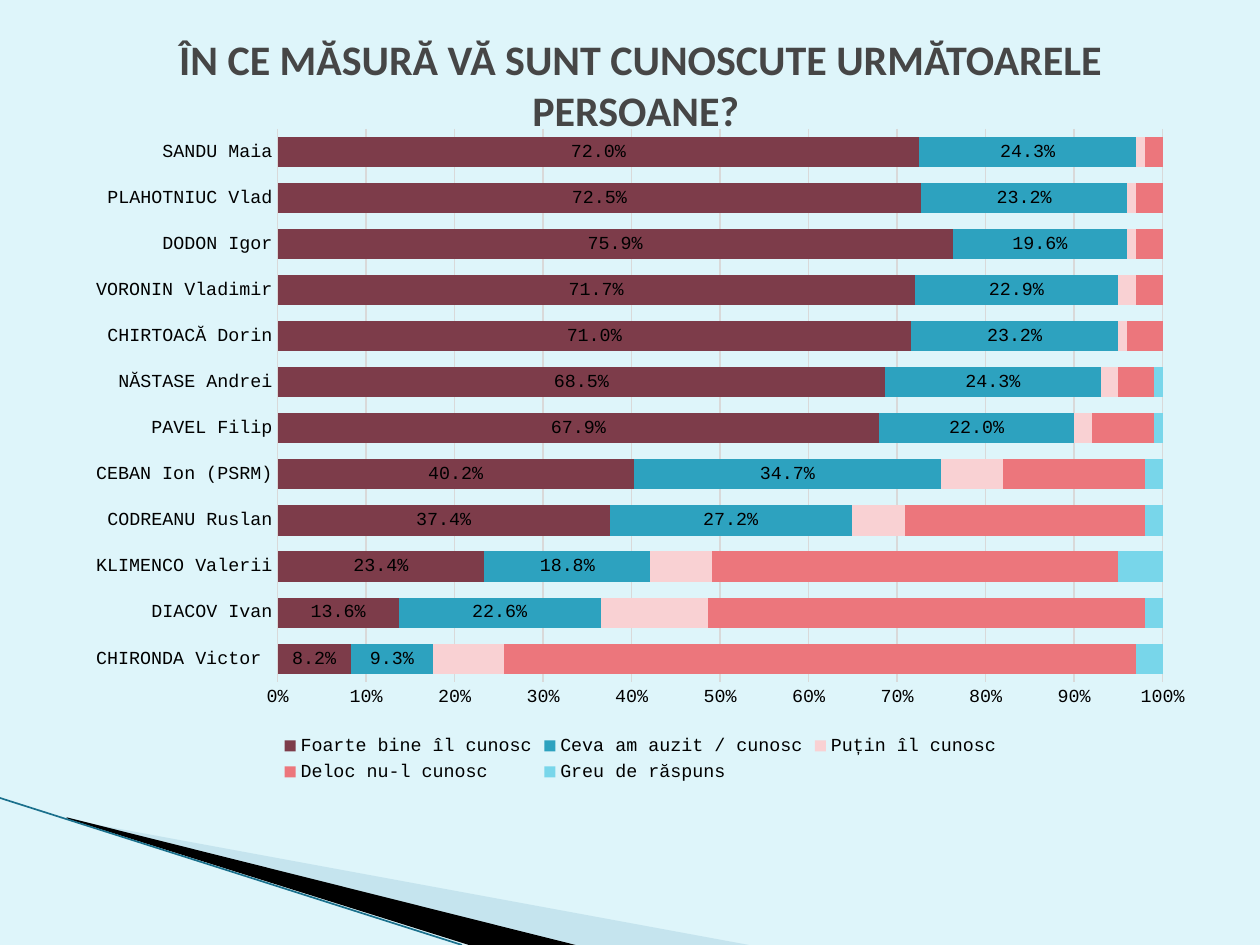
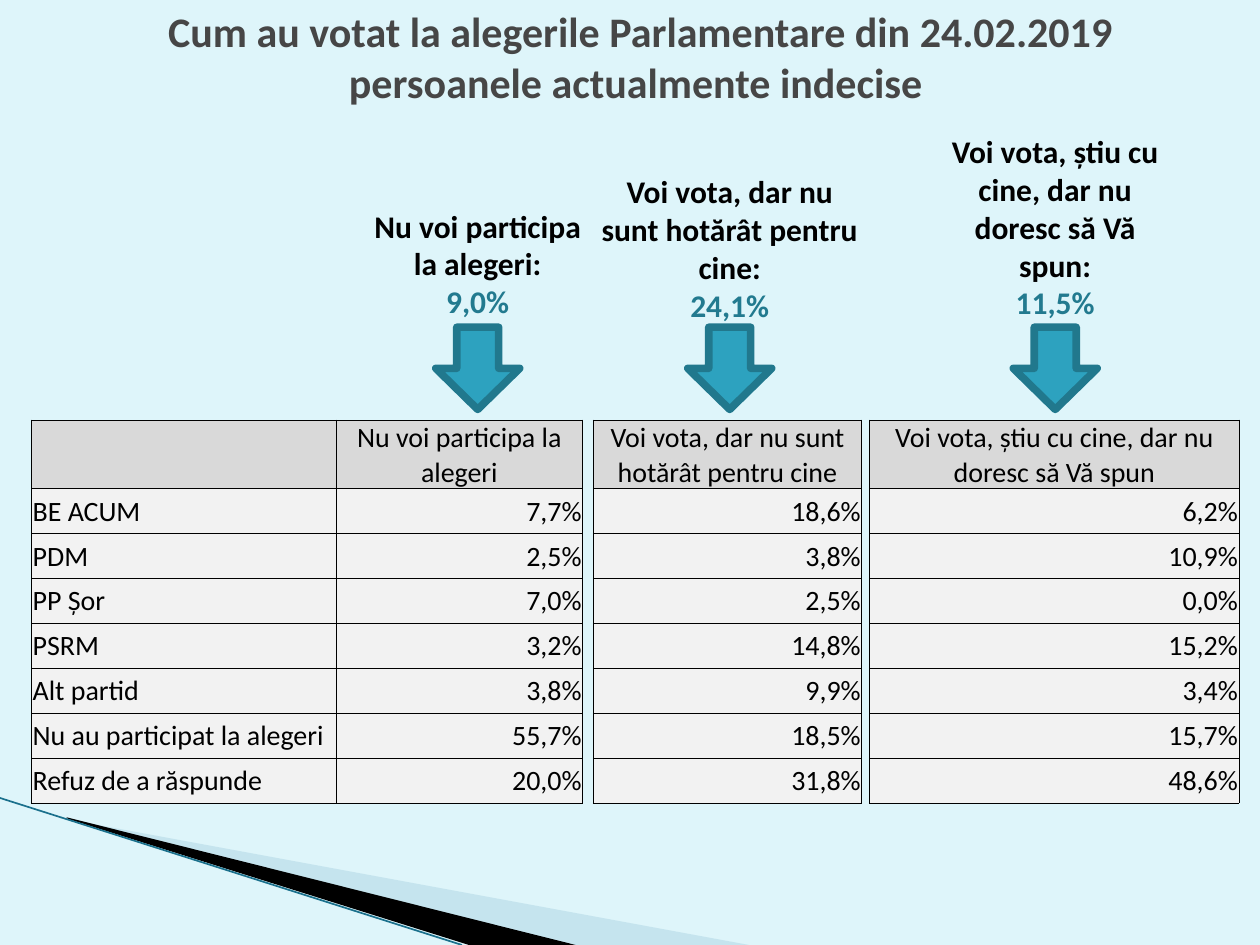
from dataclasses import dataclass

from lxml import etree
from pptx import Presentation
from pptx import util as u
from pptx.chart.data import CategoryChartData
from pptx.dml.color import RGBColor
from pptx.enum import chart as ch, shapes, text
from pptx.oxml import ns

Pt = u.Pt


@dataclass(frozen=True)
class Theme:
    background: str = "DEF5FA"
    title: str = "464646"
    ink: str = "000000"
    accent: str = "2DA2BF"
    accent_dark: str = "21788D"
    percent: str = "227A8F"
    wedge: str = "A0CBDC"
    edge: str = "1A708C"
    grid: str = "D9D9D9"
    header: str = "D9D9D9"
    cell: str = "F2F2F2"
    font: str = "Calibri"
    chart_font: str = "Courier New"
    title_size: float = 24
    callout_size: float = 18
    table_size: float = 16
    chart_size: float = 10.5


THEME = Theme()
SLIDE_WIDTH, SLIDE_HEIGHT = 720, 540
TABLE_TOP, HEADER_HEIGHT, ROW_HEIGHT = 240, 39, 25.7
ARROW_TOP, ARROW_WIDTH, ARROW_HEIGHT = 187, 48, 47

PEOPLE = ["CHIRONDA Victor ", "DIACOV Ivan", "KLIMENCO Valerii", "CODREANU Ruslan",
          "CEBAN Ion (PSRM)", "PAVEL Filip", "NĂSTASE Andrei", "CHIRTOACĂ Dorin",
          "VORONIN Vladimir", "DODON Igor", "PLAHOTNIUC Vlad", "SANDU Maia"]

# name, colour, labelled, values
ANSWERS = [
    ("Foarte bine îl cunosc", "7D3C4A", True,
     [0.082, 0.136, 0.234, 0.374, 0.402, 0.679, 0.685, 0.71, 0.717, 0.759, 0.725, 0.72]),
    ("Ceva am auzit / cunosc", THEME.accent, True,
     [0.093, 0.226, 0.188, 0.272, 0.347, 0.22, 0.243, 0.232, 0.229, 0.196, 0.232, 0.243]),
    ("Puțin îl cunosc", "F9D1D3", False,
     [0.08, 0.12, 0.07, 0.06, 0.07, 0.02, 0.02, 0.01, 0.02, 0.01, 0.01, 0.01]),
    ("Deloc nu-l cunosc", "EC767C", False,
     [0.71, 0.49, 0.46, 0.27, 0.16, 0.07, 0.04, 0.04, 0.03, 0.03, 0.03, 0.02]),
    ("Greu de răspuns", "78D6EA", False,
     [0.03, 0.02, 0.05, 0.02, 0.02, 0.01, 0.01, 0, 0, 0, 0, 0]),
]

PARTIES = ["BE ACUM", "PDM", "PP Șor", "PSRM", "Alt partid",
           "Nu au participat la alegeri", "Refuz de a răspunde"]

# group, share, (callout centre, top, width), (table left, column width), votes by party
UNDECIDED = [
    ("Nu voi participa la alegeri", "9,0%", (273, 114.5, 138), (18, 141),
     ["7,7%", "2,5%", "7,0%", "3,2%", "3,8%", "55,7%", "20,0%"]),
    ("Voi vota, dar nu sunt hotărât pentru cine", "24,1%", (417, 95, 162), (339, 153.5),
     ["18,6%", "3,8%", "2,5%", "14,8%", "9,9%", "18,5%", "31,8%"]),
    ("Voi vota, știu cu cine, dar nu doresc să Vă spun", "11,5%", (603, 72, 138), (497, 211),
     ["6,2%", "10,9%", "0,0%", "15,2%", "3,4%", "15,7%", "48,6%"]),
]
PARTY_COLUMN = 174


def rgb(code):
    return RGBColor.from_string(code)


def paint(target, code):
    target.fill.solid()
    target.fill.fore_color.rgb = rgb(code)


def style_font(font, size, color=THEME.ink, bold=False, name=THEME.font):
    font.name, font.size, font.bold = name, Pt(size), bold
    font.color.rgb = rgb(color)


def add_span(para, wording, size, color=THEME.ink, bold=False, align=text.PP_ALIGN.CENTER):
    para.alignment = align
    span = para.add_run()
    span.text = wording
    style_font(span.font, size, color, bold)


def add_wedge(page, corners, color, opacity=None):
    points = [(Pt(x), Pt(y)) for x, y in corners]
    builder = page.shapes.build_freeform(*points[0])
    builder.add_line_segments(points[1:])
    wedge = builder.convert_to_shape()
    wedge.shadow.inherit = False
    paint(wedge, color)
    wedge.line.fill.background()
    if opacity:
        tone = wedge.fill._xPr.find(".//" + ns.qn("a:srgbClr"))
        etree.SubElement(tone, ns.qn("a:alpha"), val=str(opacity * 1000))


def add_corner_art(page):
    add_wedge(page, [(40, 468.5), (428, 540), (328, 540), (40, 468)], THEME.wedge, 40)
    add_wedge(page, [(38, 467), (329, 540), (268, 540), (39, 468)], THEME.ink)
    edge = page.shapes.add_connector(shapes.MSO_CONNECTOR.STRAIGHT,
                                     Pt(0), Pt(456), Pt(264), Pt(SLIDE_HEIGHT))
    edge.line.color.rgb = rgb(THEME.edge)
    edge.line.width = Pt(0.95)
    etree.SubElement(edge._element.spPr, ns.qn("a:effectLst"))


def add_page(deck, title, title_top):
    page = deck.slides.add_slide(deck.slide_layouts.get_by_name("Title Only"))
    add_corner_art(page)
    box = page.shapes.title
    box.left, box.top, box.width, box.height = Pt(42), Pt(title_top), Pt(648), Pt(60)
    frame = box.text_frame
    frame.auto_size = text.MSO_AUTO_SIZE.NONE
    frame.word_wrap = True
    frame.vertical_anchor = text.MSO_ANCHOR.MIDDLE
    add_span(frame.paragraphs[0], title, THEME.title_size, THEME.title, True)
    return page


def add_awareness_chart(page):
    data = CategoryChartData(number_format="0.0%")
    data.categories = PEOPLE
    for name, _, _, values in ANSWERS:
        data.add_series(name, values)
    chart = page.shapes.add_chart(ch.XL_CHART_TYPE.BAR_STACKED_100, Pt(42), Pt(66),
                                  Pt(648), Pt(384), data).chart
    style_font(chart.font, THEME.chart_size, name=THEME.chart_font)
    chart.has_title = False
    chart.has_legend = True
    chart.legend.position = ch.XL_LEGEND_POSITION.BOTTOM
    chart.legend.include_in_layout = False
    style_font(chart.legend.font, THEME.chart_size, name=THEME.chart_font)

    plot = chart.plots[0]
    plot.gap_width, plot.overlap, plot.vary_by_categories = 53, 100, False
    for series, (_, color, labelled, _) in zip(plot.series, ANSWERS):
        paint(series.format, color)
        if labelled:
            labels = series.data_labels
            labels.show_value = True
            labels.number_format, labels.number_format_is_linked = "0.0%", False
            style_font(labels.font, THEME.chart_size, name=THEME.chart_font)

    for axis in (chart.category_axis, chart.value_axis):
        axis.major_tick_mark = axis.minor_tick_mark = ch.XL_TICK_MARK.NONE
        style_font(axis.tick_labels.font, THEME.chart_size, name=THEME.chart_font)
    scale = chart.value_axis
    scale.major_unit = 0.1
    scale.tick_labels.number_format = "0%"
    scale.tick_labels.number_format_is_linked = False
    scale.format.line.fill.background()
    scale.has_major_gridlines = True
    for line in (chart.category_axis.format.line, scale.major_gridlines.format.line):
        line.color.rgb = rgb(THEME.grid)
        line.width = Pt(0.75)


def add_callout(page, wording, share, centre, top, width):
    box = page.shapes.add_textbox(Pt(centre - width / 2), Pt(top), Pt(width),
                                  Pt(ARROW_TOP - top))
    frame = box.text_frame
    frame.word_wrap = True
    frame.auto_size = text.MSO_AUTO_SIZE.SHAPE_TO_FIT_TEXT
    add_span(frame.paragraphs[0], wording, THEME.callout_size, bold=True)
    add_span(frame.add_paragraph(), share, THEME.callout_size, THEME.percent, True)


def add_down_arrow(page, centre):
    arrow = page.shapes.add_shape(shapes.MSO_SHAPE.DOWN_ARROW, Pt(centre - ARROW_WIDTH / 2),
                                  Pt(ARROW_TOP), Pt(ARROW_WIDTH), Pt(ARROW_HEIGHT))
    arrow.shadow.inherit = False
    paint(arrow, THEME.accent)
    arrow.line.color.rgb = rgb(THEME.accent_dark)
    arrow.line.width = Pt(4.33)


def add_borders(cell):
    """Rule all four sides; the borders must precede the cell's fill."""
    props = cell._tc.get_or_add_tcPr()
    for position, side in enumerate(("lnL", "lnR", "lnT", "lnB")):
        line = etree.Element(ns.qn(f"a:{side}"), w=str(Pt(0.5)))
        fill = etree.SubElement(line, ns.qn("a:solidFill"))
        etree.SubElement(fill, ns.qn("a:srgbClr"), val=THEME.ink)
        props.insert(position, line)


def add_vote_table(page, left, widths, rows):
    """Lay out rows of text: header centred, party names left, the last column right."""
    height = HEADER_HEIGHT + ROW_HEIGHT * (len(rows) - 1)
    table = page.shapes.add_table(len(rows), len(widths), Pt(left), Pt(TABLE_TOP),
                                  Pt(sum(widths)), Pt(height)).table
    table.first_row = table.horz_banding = False
    for column, width in zip(table.columns, widths):
        column.width = Pt(width)
    for r, row in enumerate(rows):
        table.rows[r].height = Pt(ROW_HEIGHT if r else HEADER_HEIGHT)
        for c, wording in enumerate(row):
            cell = table.cell(r, c)
            cell.margin_left = cell.margin_right = cell.margin_top = Pt(0.7)
            cell.margin_bottom = 0
            cell.vertical_anchor = text.MSO_ANCHOR.MIDDLE
            paint(cell, THEME.cell if r else THEME.header)
            add_borders(cell)
            if r == 0:
                align = text.PP_ALIGN.CENTER
            elif c == len(row) - 1:
                align = text.PP_ALIGN.RIGHT
            else:
                align = text.PP_ALIGN.LEFT
            if wording:
                add_span(cell.text_frame.paragraphs[0], wording, THEME.table_size, align=align)


def build_awareness(deck):
    page = add_page(deck, "ÎN CE MĂSURĂ VĂ SUNT CUNOSCUTE URMĂTOARELE PERSOANE? ", 18)
    add_awareness_chart(page)


def build_undecided(deck):
    page = add_page(deck, "Cum au votat la alegerile Parlamentare din 24.02.2019 "
                          "persoanele actualmente indecise ", 2)
    for index, (group, share, callout, (left, width), votes) in enumerate(UNDECIDED):
        add_callout(page, group + ":", share, *callout)
        add_down_arrow(page, callout[0])
        widths, rows = [width], [[entry] for entry in [group] + votes]
        if index == 0:
            widths = [PARTY_COLUMN] + widths
            rows = [[party] + row for party, row in zip([""] + PARTIES, rows)]
        add_vote_table(page, left, widths, rows)


def main():
    deck = Presentation()
    deck.slide_width, deck.slide_height = Pt(SLIDE_WIDTH), Pt(SLIDE_HEIGHT)
    paint(deck.slide_master.background, THEME.background)
    build_awareness(deck)
    build_undecided(deck)
    deck.save("out.pptx")


if __name__ == "__main__":
    main()
